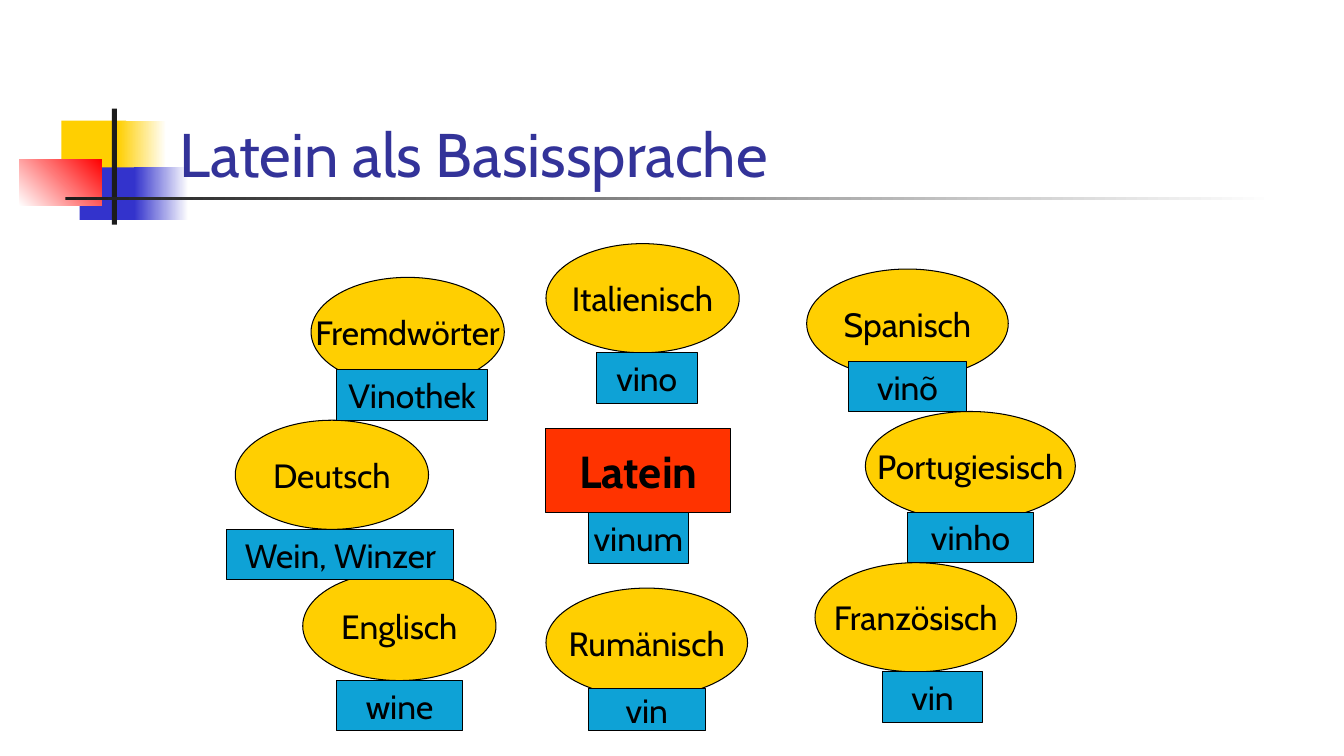
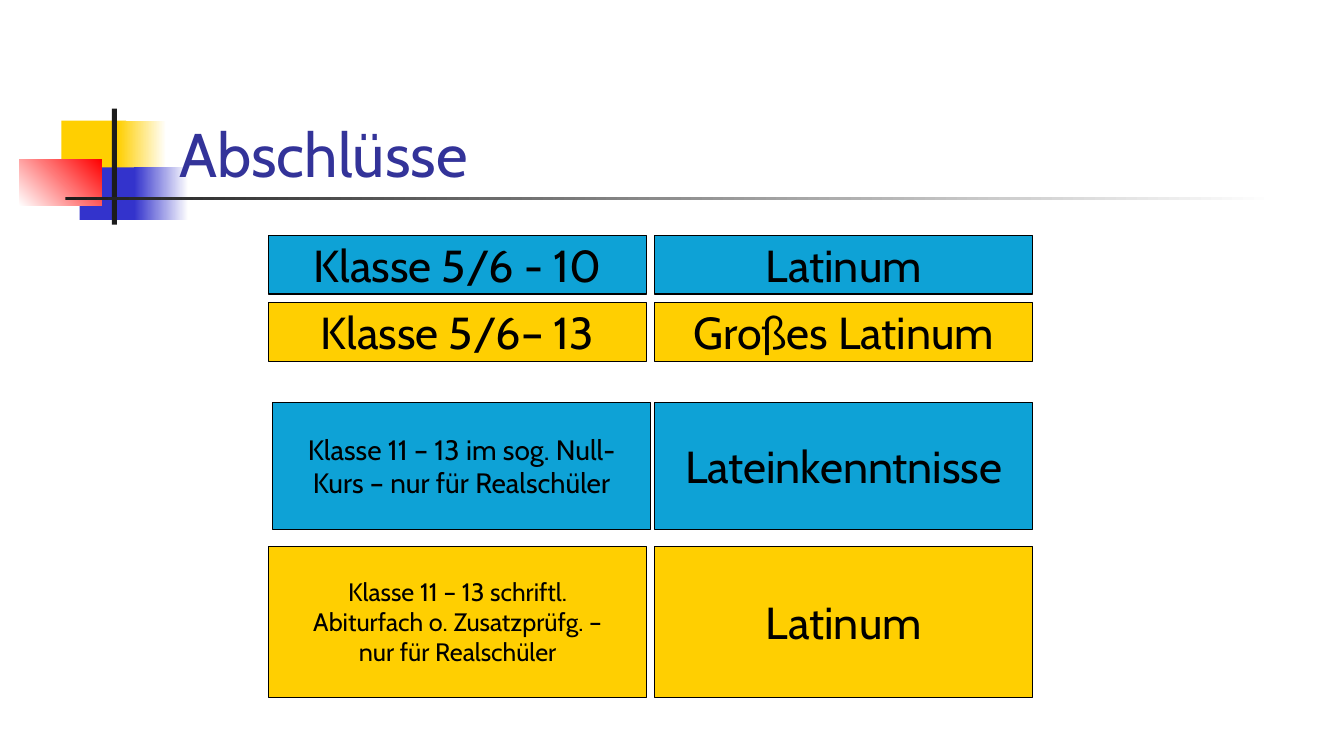
from dataclasses import dataclass

from pptx import Presentation
from pptx.dml.color import RGBColor
from pptx.enum.shapes import MSO_SHAPE
from pptx.enum.text import MSO_ANCHOR, PP_ALIGN
from pptx.util import Cm, Pt


@dataclass(frozen=True)
class Theme:
    """Colours, font and type sizes shared by the slides."""
    yellow: str = "FFCF01"
    cyan: str = "0EA2D6"
    orange: str = "FF3300"
    blue: str = "3333CC"
    red: str = "FF0000"
    charcoal: str = "1C1C1C"
    black: str = "000000"
    white: str = "FFFFFF"
    title_blue: str = "333399"
    font: str = "Cabin"
    title_size: int = 44
    large_size: int = 32
    label_size: int = 24
    note_size: int = 20
    small_size: int = 18
    outline: float = 0.75


@dataclass(frozen=True)
class Box:
    """A rectangle in centimetres."""
    left: float
    top: float
    width: float
    height: float

    def inner(self, left, top, width, height):
        """Return a box placed relative to this one."""
        return Box(self.left + left, self.top + top, width, height)

    def lengths(self):
        """Return position and size as slide lengths."""
        return Cm(self.left), Cm(self.top), Cm(self.width), Cm(self.height)


THEME = Theme()
EMBLEM_BOX = Box(0.48, 2.74, 31.65, 2.92)
TITLE_BOX = Box(4.27, 1.73, 28.85, 3.18)
DIAGRAM_BOX = Box(5.72, 6.14, 21.37, 12.28)
GRID_BOX = Box(6.77, 5.93, 19.26, 11.64)
OVAL_HEIGHT = 2.75
COLUMN_GAP = 0.21

LANGUAGES = [
    ("Italienisch", (8.04, 0, 4.87), "vino", (1.27, 2.75, 2.54, 1.27)),
    ("Spanisch", (14.61, 0.64, 5.08), "vinõ", (1.06, 2.33, 2.96, 1.27)),
    ("Portugiesisch", (16.09, 4.23, 5.29), "vinho", (1.06, 2.54, 3.18, 1.27)),
    ("Französisch", (14.82, 8.04, 5.08), "vin", (1.69, 2.75, 2.54, 1.27)),
    ("Rumänisch", (8.04, 8.68, 5.08), "vin", (1.06, 2.54, 2.96, 1.06)),
    ("Fremdwörter", (2.12, 0.85, 4.87), "Vinothek", (0.64, 2.33, 3.81, 1.27)),
    ("Deutsch", (0.21, 4.45, 4.87), "Wein, Winzer", (-0.21, 2.75, 5.72, 1.27)),
    ("Englisch", (1.91, 8.26, 4.87), "wine", (0.85, 2.75, 3.18, 1.27)),
]

QUALIFICATIONS = [
    (0, 0, 1.48, THEME.cyan, "Klasse 5/6 - 10", THEME.large_size, "Latinum"),
    (0, 1.69, 1.48, THEME.yellow, "Klasse 5/6– 13", THEME.large_size, "Großes Latinum"),
    (0.1, 4.21, 3.2, THEME.cyan,
     "Klasse 11 – 13 im sog. Null-\nKurs – nur für Realschüler",
     THEME.note_size, "Lateinkenntnisse"),
    (0, 7.83, 3.81, THEME.yellow,
     "Klasse 11 – 13 schriftl.\nAbiturfach o. Zusatzprüfg. –\nnur für Realschüler",
     THEME.small_size, "Latinum"),
]


def style_text(text_frame, text, size, color, alignment, bold=False):
    """Write text into a frame in one style."""
    text_frame.text = text
    for paragraph in text_frame.paragraphs:
        paragraph.alignment = alignment
        paragraph.font.name = THEME.font
        paragraph.font.size = Pt(size)
        paragraph.font.bold = bold
        paragraph.font.color.rgb = RGBColor.from_string(color)


def add_block(slide, box, color, kind=MSO_SHAPE.RECTANGLE):
    """Add a plain filled shape without outline or shadow."""
    shape = slide.shapes.add_shape(kind, *box.lengths())
    shape.shadow.inherit = False
    shape.fill.solid()
    shape.fill.fore_color.rgb = RGBColor.from_string(color)
    shape.line.fill.background()
    return shape


def add_fade(slide, box, start, end, angle=0):
    """Add a rectangle that fades between two colours."""
    shape = add_block(slide, box, start)
    shape.fill.gradient()
    shape.fill.gradient_angle = angle
    for stop, color in zip(shape.fill.gradient_stops, (start, end)):
        stop.color.rgb = RGBColor.from_string(color)


def add_label(slide, box, text, color, size=THEME.label_size,
              kind=MSO_SHAPE.RECTANGLE, bold=False):
    """Add an outlined shape with centred text."""
    shape = add_block(slide, box, color, kind)
    shape.line.color.rgb = RGBColor.from_string(THEME.black)
    shape.line.width = Pt(THEME.outline)
    shape.text_frame.word_wrap = False
    shape.text_frame.vertical_anchor = MSO_ANCHOR.MIDDLE
    style_text(shape.text_frame, text, size, THEME.black, PP_ALIGN.CENTER, bold)


def add_emblem(slide, box):
    """Draw the coloured squares, the upright bar and the title rule."""
    add_block(slide, box.inner(1.07, 0.3, 1.63, 1.32), THEME.yellow)
    add_fade(slide, box.inner(2.49, 0.3, 1.22, 1.32), THEME.yellow, THEME.white)
    add_block(slide, box.inner(1.53, 1.48, 1.57, 1.32), THEME.blue)
    add_fade(slide, box.inner(2.9, 1.48, 1.37, 1.32), THEME.blue, THEME.white)
    add_fade(slide, box.inner(0, 1.27, 2.08, 1.17), THEME.white, THEME.red, 45)
    add_block(slide, box.inner(2.34, 0, 0.13, box.height), THEME.charcoal)
    add_fade(slide, box.inner(1.17, 2.22, 30.48, 0.09), THEME.charcoal, THEME.white)


def add_title(slide, box, text):
    """Write the slide title at the bottom of its box."""
    text_frame = slide.shapes.add_textbox(*box.lengths()).text_frame
    text_frame.word_wrap = True
    text_frame.vertical_anchor = MSO_ANCHOR.BOTTOM
    style_text(text_frame, text, THEME.title_size, THEME.title_blue, PP_ALIGN.LEFT)


def add_language_diagram(slide, box):
    """Place the languages and their words around Latin."""
    center = box.inner(8.04, 4.66, 4.66, 2.12)
    add_label(slide, center, "Latein", THEME.orange, THEME.large_size, bold=True)
    words = [("vinum", center.inner(1.06, center.height, 2.54, 1.27))]
    for language, (left, top, width), word, word_place in LANGUAGES:
        oval = box.inner(left, top, width, OVAL_HEIGHT)
        add_label(slide, oval, language, THEME.yellow, kind=MSO_SHAPE.OVAL)
        words.append((word, oval.inner(*word_place)))
    for word, word_box in words:
        add_label(slide, word_box, word, THEME.cyan)


def add_qualification_grid(slide, box):
    """Place each school path beside its qualification."""
    width = (box.width - COLUMN_GAP) / 2
    for shift, top, height, color, path_text, size, result in QUALIFICATIONS:
        add_label(slide, box.inner(shift, top, width, height), path_text, color, size)
        result_box = box.inner(width + COLUMN_GAP, top, width, height)
        add_label(slide, result_box, result, color, THEME.large_size)


def add_titled_slide(presentation, title):
    """Add a blank slide with the shared emblem and a title."""
    slide = presentation.slides.add_slide(presentation.slide_layouts[6])
    add_emblem(slide, EMBLEM_BOX)
    add_title(slide, TITLE_BOX, title)
    return slide


def main():
    """Build and save the presentation."""
    presentation = Presentation()
    presentation.slide_width = Cm(33.87)
    presentation.slide_height = Cm(19.05)
    add_language_diagram(
        add_titled_slide(presentation, "Latein als Basissprache"), DIAGRAM_BOX)
    add_qualification_grid(
        add_titled_slide(presentation, "Abschlüsse"), GRID_BOX)
    presentation.save("out.pptx")


if __name__ == "__main__":
    main()
